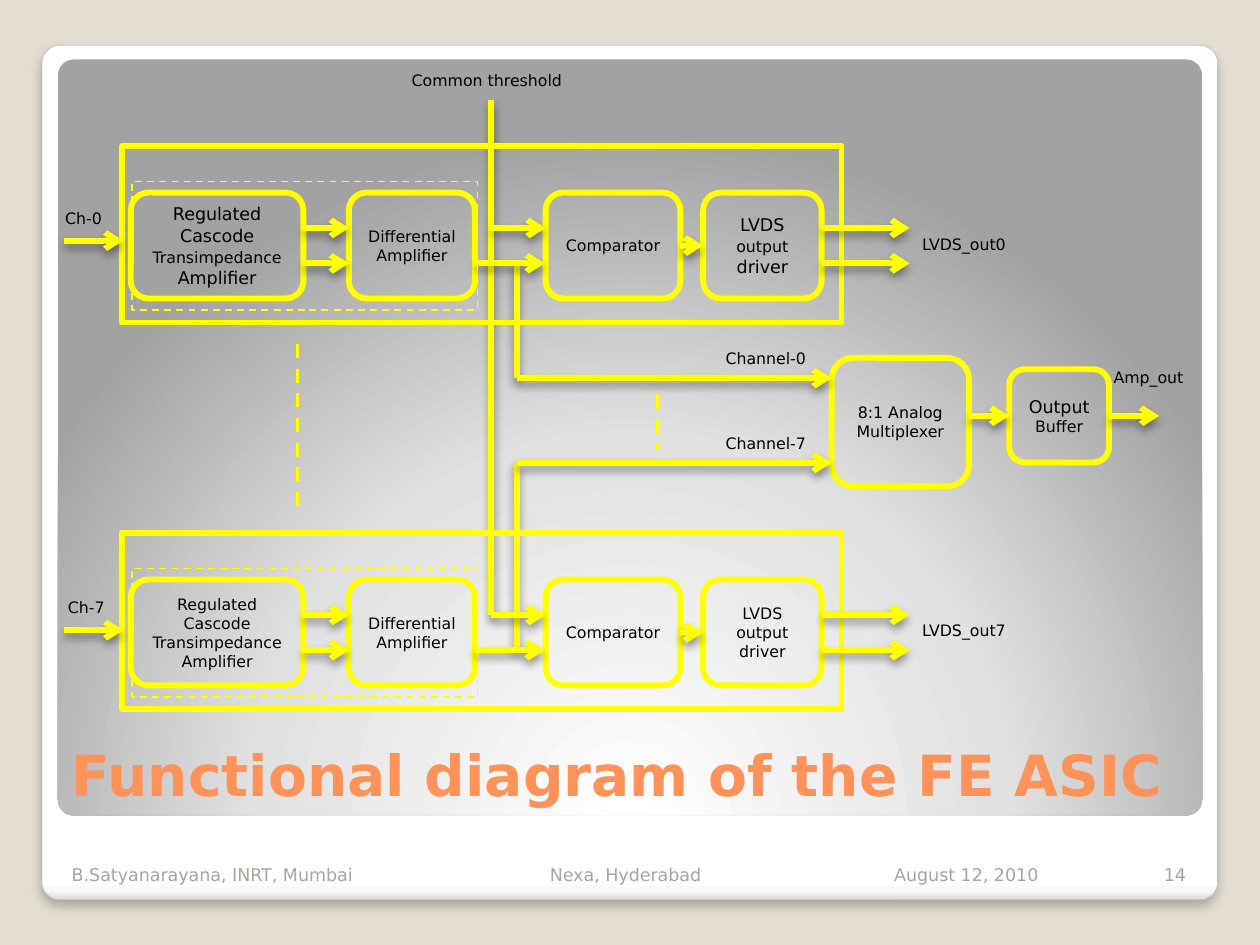
import dataclasses

import pptx
import pptx.dml.color
import pptx.enum.dml
import pptx.enum.shapes
import pptx.enum.text
import pptx.oxml
import pptx.oxml.ns
import pptx.util

Pt = pptx.util.Pt
Shape = pptx.enum.shapes.MSO_SHAPE
Align = pptx.enum.text.PP_ALIGN
Anchor = pptx.enum.text.MSO_ANCHOR
Dash = pptx.enum.dml.MSO_LINE.DASH


@dataclasses.dataclass(frozen=True)
class Theme:
    """Colours, font and sizes of the slide."""
    font: str = "DejaVu Sans"
    back: str = "E3DED1"
    edge: str = "A4A4A4"
    wire: str = "FFFF00"
    ink: str = "000000"
    title: str = "FF9258"
    foot: str = "A8A49B"
    card: tuple = ((0, "FFFFFF"), (98, "FFFFFF"), (99, "F7F7F7"), (100, "DADADA"))
    panel: tuple = ((0, "FFFFFF"), (55, "E1E1E1"), (100, "A2A2A2"))
    small: float = 9
    body: float = 10
    head: float = 32.4
    thick: float = 3.35
    mid: float = 2
    thin: float = 1


THEME = Theme()


def rgb(code):
    """Return a colour from its hex code."""
    return pptx.dml.color.RGBColor.from_string(code)


def node(body):
    """Return an XML element in the drawing namespace."""
    head, tail = body.split(" ", 1) if " " in body.split(">")[0] else body.split(">", 1)
    join = " " if " " in body.split(">")[0] else ">"
    space = pptx.oxml.ns.nsdecls("a")
    return pptx.oxml.parse_xml(f"{head} {space}{join}{tail}")


def shade(shape, alpha, blur, dist):
    """Give a shape a soft shadow straight below it."""
    shape._element.spPr.append(node(
        f'<a:effectLst><a:outerShdw blurRad="{Pt(blur)}" dist="{Pt(dist)}" dir="5400000">'
        f'<a:srgbClr val="000000"><a:alpha val="{alpha * 1000}"/></a:srgbClr>'
        '</a:outerShdw></a:effectLst>'))


def blend(shape, stops, way):
    """Fill a shape with a gradient."""
    shape.fill.background()
    props = shape._element.spPr
    marks = "".join(f'<a:gs pos="{pos * 1000}"><a:srgbClr val="{code}"/></a:gs>'
                    for pos, code in stops)
    grad = node(f'<a:gradFill rotWithShape="1"><a:gsLst>{marks}</a:gsLst>{way}</a:gradFill>')
    props.replace(props.find(pptx.oxml.ns.qn("a:noFill")), grad)


def write(frame, runs, color, align=Align.LEFT, bold=False):
    """Write runs of (text, size) into a text frame."""
    para = frame.paragraphs[0]
    para.alignment = align
    for text, size in runs:
        run = para.add_run()
        run.text = text
        run.font.name = THEME.font
        run.font.size = Pt(size)
        run.font.bold = bold
        run.font.color.rgb = rgb(color)


def label(shapes, left, top, width, text):
    """Place a small one-line label."""
    frame = shapes.add_textbox(Pt(left), Pt(top), Pt(width), Pt(18)).text_frame
    frame.word_wrap = False
    frame.auto_size = pptx.enum.text.MSO_AUTO_SIZE.SHAPE_TO_FIT_TEXT
    write(frame, [(text, THEME.small)], THEME.ink)


def strip(shapes, box, text, size, color, align=Align.LEFT, bold=False):
    """Place a line of text at the foot of a box."""
    frame = shapes.add_textbox(*map(Pt, box)).text_frame
    frame.word_wrap = True
    frame.vertical_anchor = Anchor.BOTTOM
    write(frame, [(text, size)], color, align, bold)


def block(shapes, box, runs=(), kind=Shape.ROUNDED_RECTANGLE, width=THEME.thick, dash=None):
    """Draw an outlined block with centred text."""
    shape = shapes.add_shape(kind, *map(Pt, box))
    shape.shadow.inherit = False
    shape.fill.background()
    shape.line.color.rgb = rgb(THEME.wire)
    shape.line.width = Pt(width)
    shape.line.dash_style = dash
    if runs:
        shape.text_frame.word_wrap = True
        shape.text_frame.vertical_anchor = Anchor.MIDDLE
        write(shape.text_frame, runs, THEME.ink, Align.CENTER)
    return shape


def wire(shapes, x1, y1, x2, y2, arrow=True, dash=False, start=None, end=None):
    """Draw a wire, joined to blocks where they are given."""
    link = shapes.add_connector(pptx.enum.shapes.MSO_CONNECTOR.STRAIGHT,
                                Pt(x1), Pt(y1), Pt(x2), Pt(y2))
    if start:
        link.begin_connect(start, 3)
    if end:
        link.end_connect(end, 1)
    link.line.color.rgb = rgb(THEME.wire)
    link.line.width = Pt(THEME.mid if dash else THEME.thick)
    if dash:
        link.line.dash_style = Dash
        link._element.spPr.append(node("<a:effectLst></a:effectLst>"))
        return
    if arrow:
        link.line._get_or_add_ln().append(node('<a:tailEnd type="arrow"/>'))
    shade(link, 40, 5.2, 3)


def stage(slide, box):
    """Draw the card and the shaded panel within the box."""
    slide.background.fill.solid()
    slide.background.fill.fore_color.rgb = rgb(THEME.back)
    left, top, width, height = box
    card = slide.shapes.add_shape(Shape.ROUNDED_RECTANGLE, *map(Pt, box))
    blend(card, THEME.card, '<a:lin ang="5400000" scaled="0"/>')
    card.line.color.rgb = rgb(THEME.edge)
    card.line.width = Pt(0.16)
    shade(card, 25, 6, 4)
    panel = slide.shapes.add_shape(Shape.ROUNDED_RECTANGLE, Pt(left + 9.1), Pt(top + 8.1),
                                   Pt(width - 18), Pt(height - 56.2))
    panel.shadow.inherit = False
    blend(panel, THEME.panel, '<a:path path="circle"><a:fillToRect l="50000" t="175000"'
                              ' r="50000" b="-75000"/></a:path>')
    panel.line.fill.background()
    card.adjustments[0] = panel.adjustments[0] = 0.021


def footer(shapes, box):
    """Place author, venue, date and page number along the box."""
    left, top, width, height = box
    parts = [("B.Satyanarayana, INRT, Mumbai", 0, 220), ("Nexa, Hyderabad", 273.2, 150),
             ("August 12, 2010", 470, 140)]
    for text, shift, span in parts:
        strip(shapes, (left + shift, top, span, height), text, THEME.body, THEME.foot)
    strip(shapes, (left + width - 34, top, 34, height), "14", THEME.body, THEME.foot, Align.RIGHT)


def channel(shapes, box, number, texts, drop):
    """Draw one channel in its frame, with its inputs and outputs."""
    left, top, width, height = box
    group = shapes.add_group_shape().shapes
    spans = [(5, 98.6), (129.6, 72), (242, 77), (332, 67.7)]
    amp, diff, comp, lvds = [
        block(group, (left + shift, top + 26.6, span, 60.5), runs)
        for (shift, span), runs in zip(spans, texts)]
    high, low = top + 46.8, top + 67
    for level in (high, low):
        wire(group, left + 103, level, left + 129.6, level)
    wire(group, left + 201.6, low, left + 241.5, low)
    wire(group, left + 211, high, left + 242, high)
    wire(group, 0, 0, 0, 0, start=comp, end=lvds)
    block(group, box, kind=Shape.RECTANGLE)
    block(group, (left + 5.8, top + 20.2, 197.3, 73.4), kind=Shape.RECTANGLE,
          width=THEME.thin, dash=Dash)
    for level in (high, low):
        wire(shapes, left + 399.7, level, left + 450, level)
    label(shapes, left + 450, high, 65.5, f"LVDS_out{number}")
    entry = top + 54 + drop
    wire(shapes, left - 33, entry, left + 0.7, entry)
    label(shapes, left - 39.6 + drop, entry - 22, 36.7, f"Ch-{number}")


def output(shapes, box):
    """Draw the multiplexer, the buffer and the wires that feed them."""
    left, top, width, height = box
    mux = block(shapes, (left, top, 78.5, height), [("8:1 Analog Multiplexer", THEME.small)])
    buffer = block(shapes, (left + 101.5, top + 6.5, 57, 53.3),
                   [("Output ", THEME.body), ("Buffer", THEME.small)])
    level = top + 33.15
    wire(shapes, left + 78.5, level, 0, 0, end=buffer)
    wire(shapes, 0, 0, left + width, level, start=buffer)
    label(shapes, left + 154, top + 2.2, 56.2, "Amp_out")
    tap = left - 180
    for number, feed, source in ((0, top + 11.6, 150.5), (7, top + 60, 371.5)):
        wire(shapes, tap, source, tap, feed, arrow=False)
        wire(shapes, tap, feed, left, feed)
        label(shapes, left - 67.7, feed - 20.3, 62, f"Channel-{number}")
    wire(shapes, left - 99.4, top + 20.9, left - 99.4, top + 52.6, dash=True)


def main():
    """Build the slide and save it."""
    deck = pptx.Presentation()
    deck.slide_width, deck.slide_height = Pt(720), Pt(540)
    slide = deck.slides.add_slide(deck.slide_layouts[6])
    shapes = slide.shapes
    stage(slide, (24, 25.9, 671.8, 488.2))
    strip(shapes, (33.9, 408.2, 652.3, 56.9), "Functional diagram of the FE ASIC",
          THEME.head, THEME.title, bold=True)
    footer(shapes, (33.9, 481, 650.9, 28))
    label(shapes, 228.2, 36.7, 101.5, "Common threshold")
    wire(shapes, 280.8, 351.4, 280.8, 56.9, arrow=False)
    wire(shapes, 169.9, 196.6, 169.9, 294.5, dash=True)
    output(shapes, (475.2, 204.5, 187.2, 73.4))
    small, body = THEME.small, THEME.body
    plain = [[("Differential Amplifier", small)], [("Comparator", small)]]
    first = [[("Regulated Cascode ", body), ("Transimpedance", small), (" Amplifier", body)],
             *plain, [("LVDS ", body), ("output", small), (" driver", body)]]
    last = [[("Regulated Cascode Transimpedance Amplifier", small)],
            *plain, [("LVDS output driver", small)]]
    for number, top, texts, drop in ((0, 83.5, first, 0), (7, 304.6, last, 1.5)):
        channel(shapes, (69.8, top, 411.1, 100.8), number, texts, drop)
    deck.save("out.pptx")


if __name__ == "__main__":
    main()
